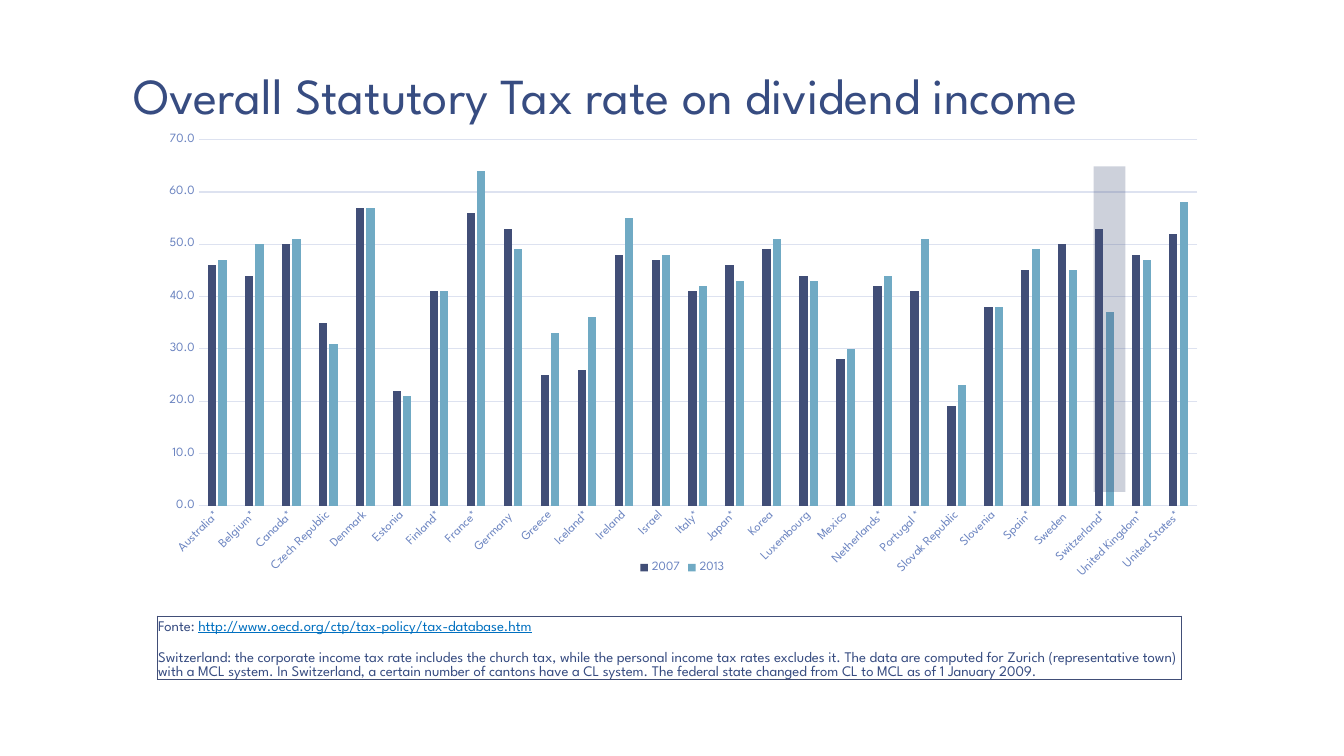
from lxml import etree
from pptx import Presentation
from pptx.chart.data import CategoryChartData
from pptx.dml.color import RGBColor
from pptx.enum.chart import XL_CHART_TYPE, XL_LEGEND_POSITION, XL_TICK_MARK
from pptx.enum.shapes import MSO_SHAPE
from pptx.enum.text import MSO_ANCHOR
from pptx.oxml import parse_xml
from pptx.oxml.ns import nsdecls, qn
from pptx.util import Pt

COLUMNS = XL_CHART_TYPE.COLUMN_CLUSTERED
LOW = XL_LEGEND_POSITION.BOTTOM
NO_TICK = XL_TICK_MARK.NONE
RECT = MSO_SHAPE.RECTANGLE
TOP, BOTTOM = MSO_ANCHOR.TOP, MSO_ANCHOR.BOTTOM

FONT = "League Spartan"
NAVY, DARK, SKY = "374C81", "414E77", "70AAC4"
LABEL, GRID, LINK = "6A83C0", "DDE2F0", "0070C0"

RATES = [
    ("Australia*", 46, 47), ("Belgium*", 44, 50), ("Canada*", 50, 51),
    ("Czech Republic", 35, 31), ("Denmark", 57, 57), ("Estonia", 22, 21),
    ("Finland*", 41, 41), ("France*", 56, 64), ("Germany ", 53, 49),
    ("Greece", 25, 33), ("Iceland*", 26, 36), ("Ireland", 48, 55),
    ("Israel", 47, 48), ("Italy*", 41, 42), ("Japan*", 46, 43),
    ("Korea", 49, 51), ("Luxembourg", 44, 43), ("Mexico", 28, 30),
    ("Netherlands*", 42, 44), ("Portugal *", 41, 51),
    ("Slovak Republic", 19, 23), ("Slovenia", 38, 38), ("Spain*", 45, 49),
    ("Sweden ", 50, 45), ("Switzerland*", 53, 37),
    ("United Kingdom*", 48, 47), ("United States*", 52, 58),
]
URL = "http://www.oecd.org/ctp/tax-policy/tax-database.htm"
NOTE = (
    "Switzerland: the corporate income tax rate includes the church tax, "
    "while the personal income tax rates excludes it. The data are computed "
    "for Zurich (representative town) with a MCL system. In Switzerland, a "
    "certain number of cantons have a CL system. The federal state changed "
    "from CL to MCL as of 1 January 2009."
)


def rgb(code):
    return RGBColor.from_string(code)


def style(font, size, color):
    font.name, font.size, font.bold = FONT, Pt(size), False
    font.color.rgb = rgb(color)


def write(para, text, size=10.5, color=NAVY, under=False):
    run = para.add_run()
    run.text = text
    style(run.font, size, color)
    run.font.underline = under


def add_title(slide, text):
    box = slide.shapes.add_textbox(Pt(88), Pt(5.8), Pt(848), Pt(77))
    frame = box.text_frame
    frame.word_wrap = True
    frame.vertical_anchor = TOP
    frame.margin_top, frame.margin_bottom = Pt(40), 0
    write(frame.paragraphs[0], text, size=36)


def place(part, x, y, w=None, h=None):
    """Pin a chart part at fractions of the chart's size."""
    for old in part.findall(qn("c:layout")):
        part.remove(old)
    layout = parse_xml(f"<c:layout {nsdecls('c')}><c:manualLayout/></c:layout>")
    rules = [("xMode", "edge"), ("yMode", "edge"), ("x", x), ("y", y)]
    if w:
        rules = [("layoutTarget", "inner"), *rules, ("w", w), ("h", h)]
    for name, val in rules:
        etree.SubElement(layout[0], qn(f"c:{name}")).set("val", str(val))
    mark = part.find(qn("c:legendPos"))
    if mark is None:
        part.insert(0, layout)
    else:
        mark.addnext(layout)


def style_axis(axis):
    axis.major_tick_mark = axis.minor_tick_mark = NO_TICK
    style(axis.tick_labels.font, 9, LABEL)


def rule(line, color=GRID, width=0.75):
    line.color.rgb = rgb(color)
    line.width = Pt(width)


def add_rates(slide):
    names, old, new = zip(*RATES)
    data = CategoryChartData(number_format="0.0")
    data.categories = names
    data.add_series("2007", old)
    data.add_series("2013", new)
    chart = slide.shapes.add_chart(
        COLUMNS, Pt(105.2), Pt(89.3), Pt(766), Pt(351.4), data).chart
    style(chart.font, 10, NAVY)
    chart.has_title = False
    plot = chart.plots[0]
    plot.gap_width, plot.overlap = 219, -27
    plot.vary_by_categories = False
    for series, color in zip(plot.series, (DARK, SKY)):
        series.format.fill.solid()
        series.format.fill.fore_color.rgb = rgb(color)

    cats, vals = chart.category_axis, chart.value_axis
    style_axis(cats)
    rule(cats.format.line)
    turn = cats._element.find(qn("c:txPr")).find(qn("a:bodyPr"))
    turn.set("rot", "-2700000")
    style_axis(vals)
    vals.minimum_scale, vals.maximum_scale, vals.major_unit = 0, 70, 10
    vals.tick_labels.number_format = "0.0"
    vals.tick_labels.number_format_is_linked = False
    vals.format.line.fill.background()
    rule(vals.major_gridlines.format.line)

    chart.has_legend = True
    legend = chart.legend
    legend.position, legend.include_in_layout = LOW, False
    style(legend.font, 9, LABEL)
    place(legend._element, 0.456, 0.88)
    place(plot._element.getparent(), 0.048, 0.03, 0.931, 0.744)


def add_band(slide):
    """Tint the columns of Switzerland."""
    band = slide.shapes.add_shape(
        RECT, Pt(781.2), Pt(118.8), Pt(22.6), Pt(232.6))
    band.shadow.inherit = False
    band.line.fill.background()
    band.fill.solid()
    band.fill.fore_color.rgb = rgb(DARK)
    tint = band.fill._xPr.find(qn("a:solidFill"))[0]
    etree.SubElement(tint, qn("a:alpha")).set("val", "26000")


def border(cell, sides):
    """Draw the named sides and clear the others."""
    props = cell._tc.get_or_add_tcPr()
    for spot, side in enumerate("LRTB"):
        fill = "<a:noFill/>"
        if side in sides:
            fill = f'<a:solidFill><a:srgbClr val="{DARK}"/></a:solidFill>'
        props.insert(spot, parse_xml(
            f'<a:ln{side} {nsdecls("a")} w="6350">{fill}</a:ln{side}>'))


def add_source(slide):
    table = slide.shapes.add_table(
        2, 1, Pt(112.3), Pt(440), Pt(731.5), Pt(43)).table
    table.first_row = table.horz_banding = False
    for row, (high, sides) in enumerate([(11, "LTR"), (32, "LRB")]):
        table.rows[row].height = Pt(high)
        cell = table.cell(row, 0)
        cell.fill.background()
        cell.vertical_anchor = BOTTOM
        cell.margin_left = cell.margin_right = cell.margin_top = Pt(0.7)
        cell.margin_bottom = 0
        border(cell, sides)
    first, last = (table.cell(row, 0).text_frame.paragraphs[0]
                   for row in range(2))
    write(first, "Fonte: ")
    write(first, URL, color=LINK, under=True)
    write(last, NOTE)


def main():
    deck = Presentation()
    deck.slide_width, deck.slide_height = Pt(960), Pt(540)
    slide = deck.slides.add_slide(deck.slide_layouts[6])
    add_title(slide, "Overall Statutory Tax rate on dividend income")
    add_source(slide)
    add_rates(slide)
    add_band(slide)
    deck.save("out.pptx")


if __name__ == "__main__":
    main()
